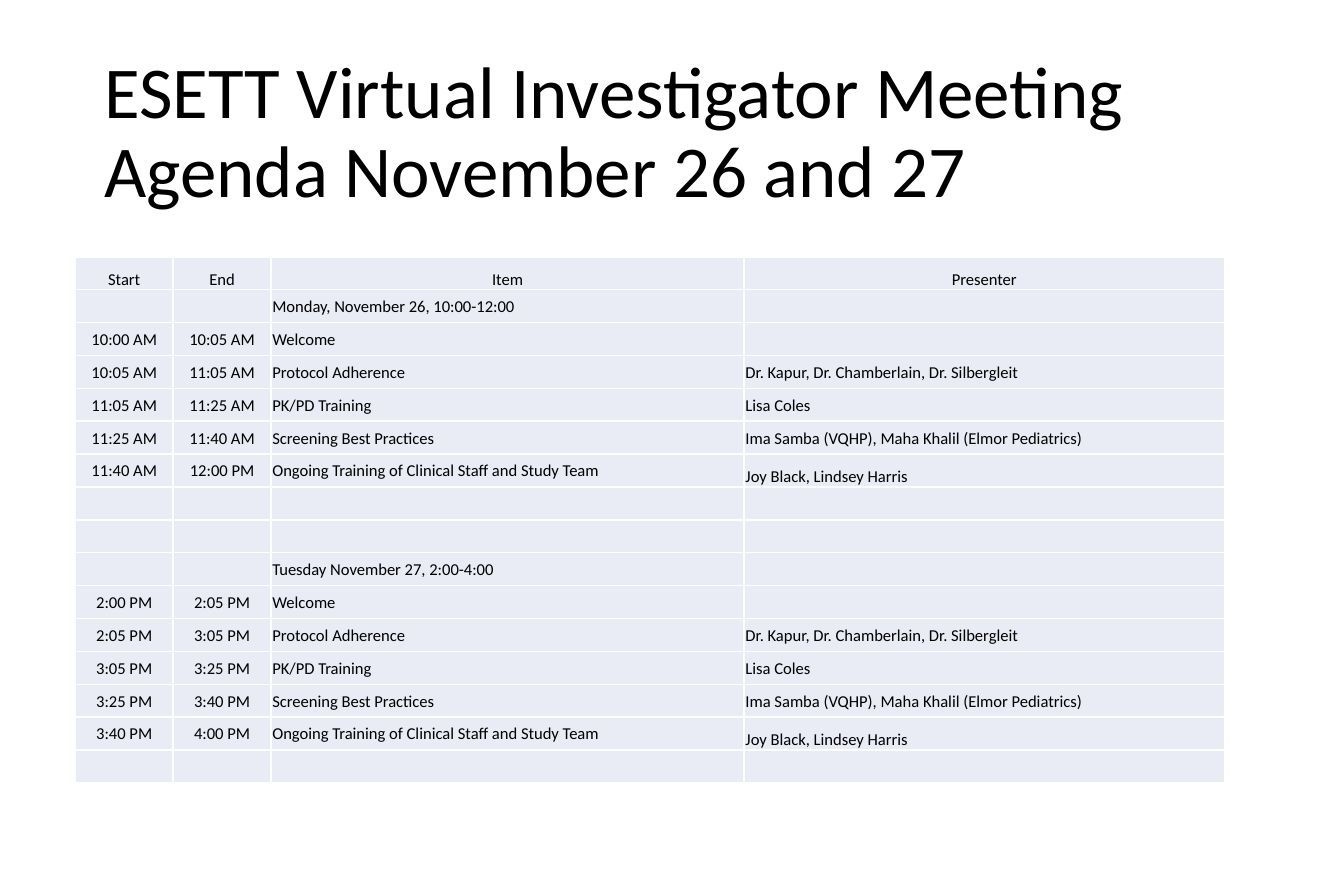
"""Build the agenda slide for a two-day virtual investigator meeting."""
from lxml.etree import SubElement
from pptx import Presentation
from pptx.dml.color import RGBColor
from pptx.enum.text import MSO_ANCHOR, PP_ALIGN
from pptx.oxml.ns import qn
from pptx.util import Cm, Pt

COLORS = {"text": "000000", "cell": "E9EBF5", "border": "FFFFFF"}
FONT = "Calibri"
TITLE_LINES = ["ESETT Virtual Investigator Meeting", "Agenda November 26 and 27"]
HEADINGS = ["Start", "End", "Item", "Presenter"]
TOPICS = [
    ("Welcome", ""),
    ("Protocol Adherence", "Dr. Kapur, Dr. Chamberlain, Dr. Silbergleit"),
    ("PK/PD Training", "Lisa Coles"),
    ("Screening Best Practices", "Ima Samba (VQHP), Maha Khalil (Elmor Pediatrics)"),
    ("Ongoing Training of Clinical Staff and Study Team", "Joy Black, Lindsey Harris"),
]
SESSIONS = [
    ("Monday, November 26, 10:00-12:00",
     ["10:00 AM", "10:05 AM", "11:05 AM", "11:25 AM", "11:40 AM", "12:00 PM"], 2),
    ("Tuesday November 27, 2:00-4:00",
     ["2:00 PM", "2:05 PM", "3:05 PM", "3:25 PM", "3:40 PM", "4:00 PM"], 1),
]
COLUMN_WIDTHS = [2.08, 2.08, 10.06, 10.21]
ROW_HEIGHT = 0.7


def style_paragraph(paragraph, size):
    paragraph.font.name = FONT
    paragraph.font.size = Pt(size)
    paragraph.font.color.rgb = RGBColor.from_string(COLORS["text"])


def add_borders(cell):
    properties = cell._tc.get_or_add_tcPr()
    for side in ("a:lnL", "a:lnR", "a:lnT", "a:lnB"):
        line = SubElement(properties, qn(side), w=str(Pt(1)))
        fill = SubElement(line, qn("a:solidFill"))
        SubElement(fill, qn("a:srgbClr"), val=COLORS["border"])


presentation = Presentation()
presentation.slide_width = Cm(28.575)
presentation.slide_height = Cm(19.05)
slide = presentation.slides.add_slide(presentation.slide_layouts[5])

title = slide.shapes.title
title.left, title.top, title.width, title.height = Cm(1.96), Cm(1.02), Cm(24.64), Cm(3.68)
title.text_frame.vertical_anchor = MSO_ANCHOR.MIDDLE
title.text_frame.word_wrap = True
heading = title.text_frame.paragraphs[0]
heading.alignment = PP_ALIGN.LEFT
heading.line_spacing = 0.9
style_paragraph(heading, 44)
heading.add_run().text = TITLE_LINES[0]
heading.add_line_break()
heading.add_run().text = TITLE_LINES[1]

agenda_rows = [HEADINGS]
for session, times, blank_rows in SESSIONS:
    agenda_rows.append(["", "", session, ""])
    for start, end, (item, presenter) in zip(times, times[1:], TOPICS):
        agenda_rows.append([start, end, item, presenter])
    agenda_rows.extend([[""] * len(HEADINGS)] * blank_rows)

agenda = slide.shapes.add_table(
    len(agenda_rows), len(HEADINGS), Cm(1.6), Cm(5.46),
    Cm(sum(COLUMN_WIDTHS)), Cm(ROW_HEIGHT * len(agenda_rows))).table
agenda.first_row = False
agenda.horz_banding = False
for column, width in zip(agenda.columns, COLUMN_WIDTHS):
    column.width = Cm(width)

for row_index, entries in enumerate(agenda_rows):
    agenda.rows[row_index].height = Cm(ROW_HEIGHT)
    for column_index, entry in enumerate(entries):
        cell = agenda.cell(row_index, column_index)
        add_borders(cell)
        cell.fill.solid()
        cell.fill.fore_color.rgb = RGBColor.from_string(COLORS["cell"])
        cell.margin_left = cell.margin_right = cell.margin_top = Cm(0.03)
        cell.margin_bottom = 0
        at_bottom = row_index == 0 or entry == TOPICS[-1][1]
        cell.vertical_anchor = MSO_ANCHOR.BOTTOM if at_bottom else MSO_ANCHOR.MIDDLE
        cell.text = entry
        paragraph = cell.text_frame.paragraphs[0]
        centred = row_index == 0 or column_index < 2
        paragraph.alignment = PP_ALIGN.CENTER if centred else PP_ALIGN.LEFT
        style_paragraph(paragraph, 10)
        if not entry:
            SubElement(paragraph._p, qn("a:endParaRPr"), sz="1000")

presentation.save("out.pptx")
